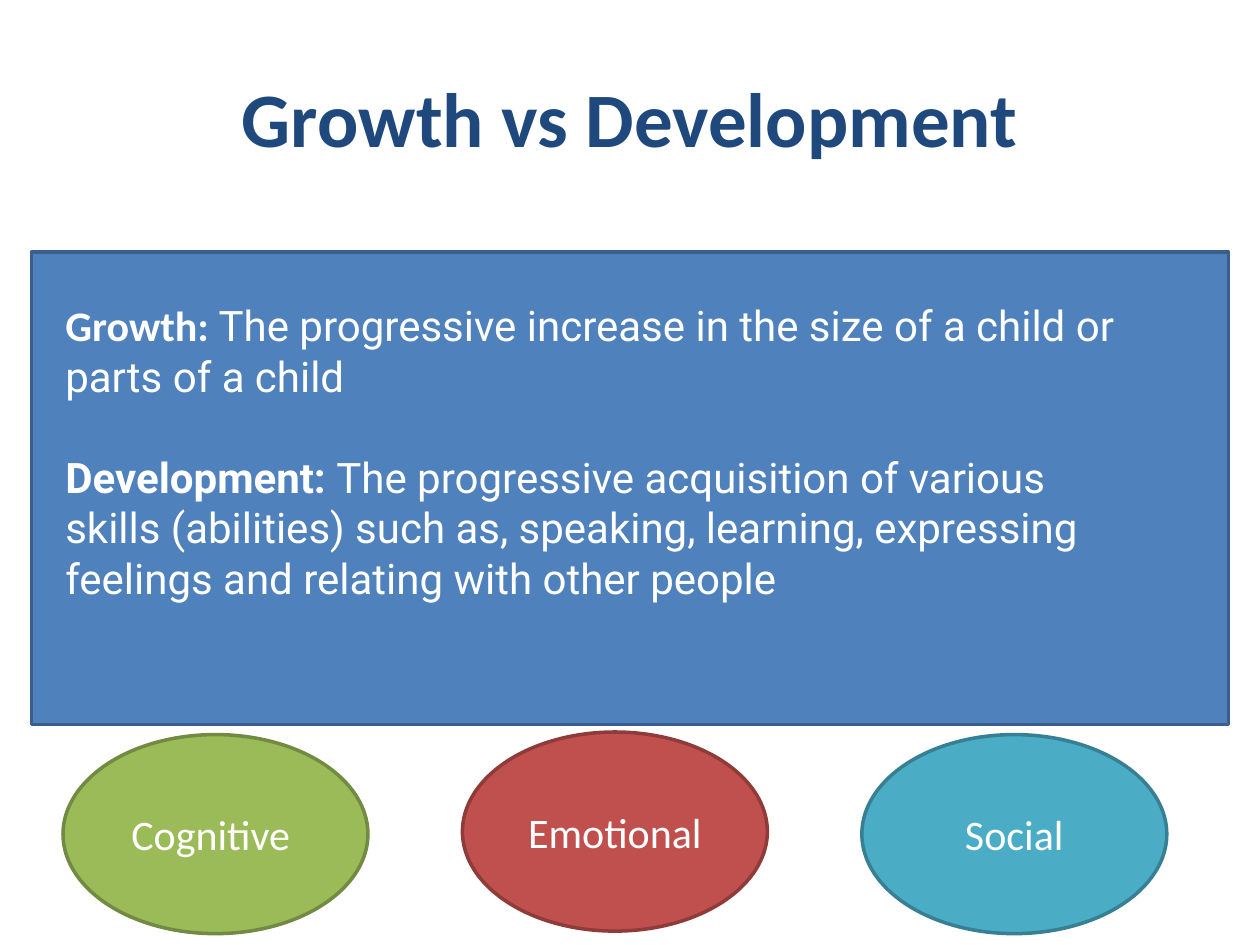
from pptx import Presentation
from pptx.dml.color import RGBColor
from pptx.enum.shapes import MSO_SHAPE
from pptx.enum.text import MSO_ANCHOR, PP_ALIGN
from pptx.util import Inches, Pt

RECTANGLE, OVAL = MSO_SHAPE.RECTANGLE, MSO_SHAPE.OVAL
TOP, MIDDLE = MSO_ANCHOR.TOP, MSO_ANCHOR.MIDDLE
LEFT, CENTER = PP_ALIGN.LEFT, PP_ALIGN.CENTER

# Content
HEADING = "Growth vs Development"
DEFINITIONS = [  # term, term font, meaning
    ("Growth: ", "Calibri",
     "The progressive increase in the size of a child or parts of a child"),
    ("Development: ", "Roboto",
     "The progressive acquisition of various skills (abilities) such as, "
     "speaking, learning, expressing feelings and relating with other people"),
]
DOMAINS = [  # label, top, fill, outline
    ("Cognitive ", 5.83, "9BBB59", "738A42"),
    ("Emotional", 5.81, "C0504D", "8E3B39"),
    ("Social", 5.83, "4BACC6", "377F92"),
]
WHITE, NAVY = "FFFFFF", "1F497D"


def color(code):
    return RGBColor.from_string(code)


def add_run(paragraph, text, font="Calibri", size=24, ink=WHITE, bold=False):
    run = paragraph.add_run()
    run.text = text
    run.font.name = font
    run.font.size = Pt(size)
    run.font.bold = bold
    run.font.color.rgb = color(ink)


def set_frame(shape, anchor, align):
    frame = shape.text_frame
    frame.word_wrap = True
    frame.vertical_anchor = anchor
    frame.paragraphs[0].alignment = align
    return frame


def add_panel(slide, kind, box, fill, outline):
    panel = slide.shapes.add_shape(kind, *map(Inches, box))
    panel.shadow.inherit = False
    panel.fill.solid()
    panel.fill.fore_color.rgb = color(fill)
    panel.line.color.rgb = color(outline)
    panel.line.width = Pt(2)
    return panel


deck = Presentation()
deck.slide_width, deck.slide_height = Inches(10), Inches(7.5)
slide = deck.slides.add_slide(deck.slide_layouts[6])

# Heading
heading = slide.shapes.add_textbox(*map(Inches, (0.5, 0.3, 9, 1.25)))
frame = set_frame(heading, MIDDLE, CENTER)
add_run(frame.paragraphs[0], HEADING, size=44, ink=NAVY, bold=True)

# Definitions on their blue panel
add_panel(slide, RECTANGLE, (0.25, 2, 9.5, 3.75), "4F81BD", "3A5F8C")
definitions = slide.shapes.add_textbox(*map(Inches, (0.42, 2.33, 8.58, 2.52)))
frame = set_frame(definitions, TOP, LEFT)
for index, (term, term_font, meaning) in enumerate(DEFINITIONS):
    paragraph = frame.add_paragraph() if index else frame.paragraphs[0]
    paragraph.space_before = Pt(29 if index else 0)
    add_run(paragraph, term, font=term_font, bold=True)
    add_run(paragraph, meaning, font="Roboto")

# Row of development domains
OVAL_LEFT, OVAL_STEP, OVAL_WIDTH, OVAL_HEIGHT = 0.5, 3.17, 2.42, 1.58
for index, (label, top, fill, outline) in enumerate(DOMAINS):
    box = (OVAL_LEFT + index * OVAL_STEP, top, OVAL_WIDTH, OVAL_HEIGHT)
    domain = add_panel(slide, OVAL, box, fill, outline)
    add_run(set_frame(domain, MIDDLE, CENTER).paragraphs[0], label)

deck.save("out.pptx")
